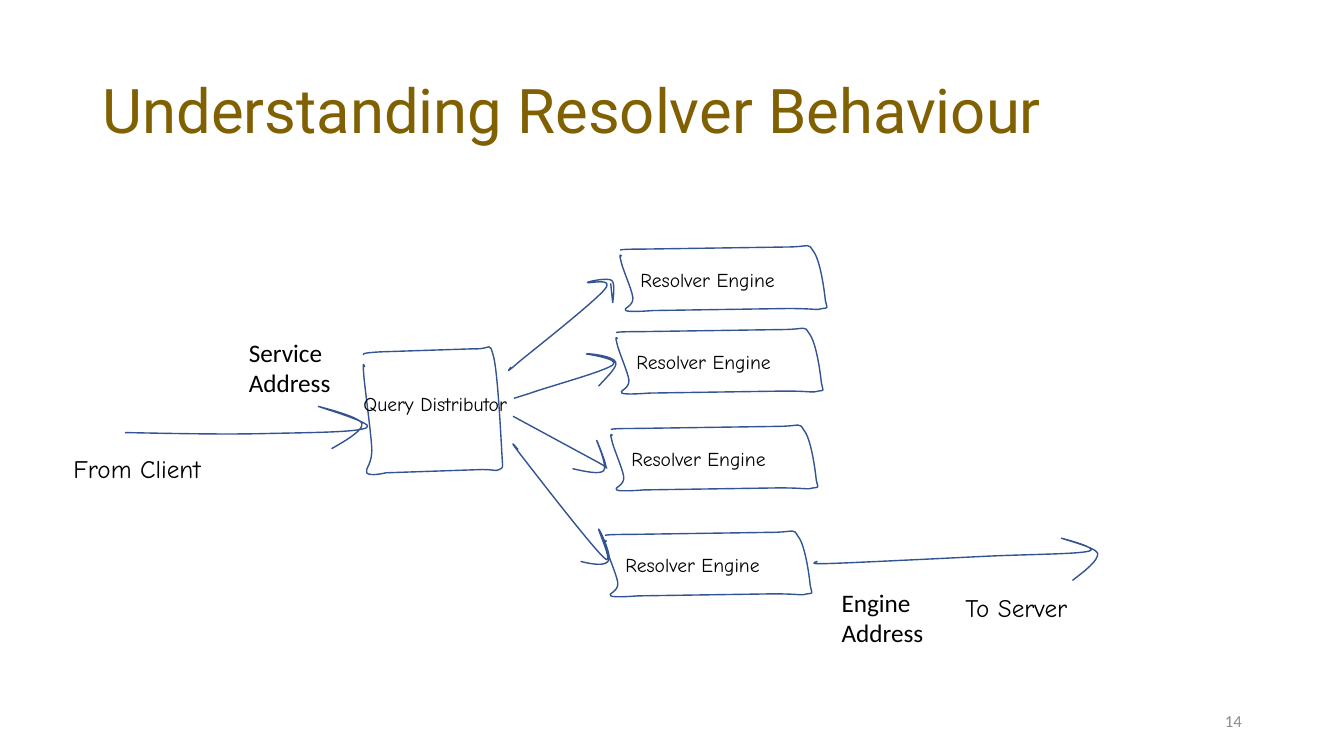
import lxml.etree
import pptx
import pptx.oxml.ns
import pptx.util
from pptx.dml.color import RGBColor
from pptx.enum.text import MSO_ANCHOR, PP_ALIGN

Cm = pptx.util.Cm
qn = pptx.oxml.ns.qn

INK = RGBColor(0x32, 0x54, 0x91)
BLACK = RGBColor(0x00, 0x00, 0x00)
GOLD = RGBColor(0x80, 0x60, 0x00)
GREY = RGBColor(0x8C, 0x8C, 0x8C)
HAND_FONT = "Comic Neue"

# Strokes are drawn on a fine grid, measured from the corner of their box.
# The first pair is the start; then two numbers make a straight line and
# six make a cubic curve.
GRID = Cm(0.0254)

ENGINE_OUTLINE = [
    (2, 10), (1, 9, -1, 7, 1, 14), (2, 21, 12, 43, 13, 51),
    (14, 60, 2, 62, 6, 64), (9, 66, 33, 64, 33, 64), (167, 62),
    (195, 62, 195, 64, 201, 62), (207, 61, 206, 63, 204, 54),
    (203, 44, 199, 14, 192, 5), (186, -4, 191, 1, 163, 1), (26, 3),
    (-1, 3, 0, 4, 1, 4)]
DISTRIBUTOR_OUTLINE = [
    (2, 20), (1, 17, 0, 14, 1, 27), (2, 40, 8, 83, 9, 100),
    (10, 116, 2, 121, 4, 125), (7, 129, 23, 125, 23, 125), (112, 122),
    (131, 121, 131, 124, 135, 122), (140, 119, 139, 123, 138, 104),
    (137, 86, 134, 27, 130, 10), (125, -7, 129, 3, 110, 2), (18, 5),
    (0, 6, 0, 7, 1, 8)]
CLIENT_ARROW = [
    (0, 26), (50, 27, 99, 28, 139, 27), (179, 26, 232, 26, 240, 21),
    (249, 17, 193, 1, 192, 0), (191, 0, 233, 10, 235, 17),
    (237, 23, 221, 33, 205, 42)]
SERVER_ARROW = [
    (4, 23), (-1, 25, -6, 26, 22, 25), (50, 24, 171, 18, 171, 18),
    (213, 16, 261, 16, 273, 13), (286, 10, 245, 0, 246, 0),
    (247, 1, 280, 9, 282, 15), (283, 22, 270, 32, 257, 42)]
FAN_ARROWS = [
    ((12.8, 7.04, 2.67, 2.31), [
        (3, 87), (0, 91, -3, 94, 12, 81), (28, 68, 85, 23, 96, 10),
        (107, -3, 78, 5, 79, 3), (80, 2, 99, -2, 103, 1),
        (107, 4, 104, 22, 104, 23), (104, 23, 103, 14, 102, 4)]),
    ((12.95, 8.92, 2.57, 1.14), [
        (0, 44), (16, 39), (32, 33, 88, 18, 98, 11), (107, 5, 72, 0, 72, 0),
        (73, -1, 99, 2, 101, 8), (103, 13, 93, 22, 84, 32)]),
    ((12.93, 10.49, 2.36, 1.42), [
        (0, 0), (83, 45), (98, 53, 92, 53, 92, 49), (92, 46, 83, 23, 83, 24),
        (83, 25, 94, 49, 90, 54), (86, 58, 72, 55, 59, 52)]),
    ((12.93, 11.2, 2.44, 3.02), [
        (5, 5), (0, -1, -5, -6, 9, 12), (23, 30, 77, 100, 90, 112),
        (102, 124, 84, 84, 85, 84), (86, 84, 98, 110, 95, 115),
        (92, 121, 79, 119, 67, 116)]),
]
ENGINE_CORNERS = [(15.62, 6.2), (15.52, 8.28), (15.39, 10.72), (15.24, 13.39)]


def draw_stroke(page, box, stroke):
    """Draw an open stroke of lines and cubic curves in a box."""
    left, top, width, height = (Cm(length) for length in box)
    builder = page.shapes.build_freeform(0, 0, scale=GRID)
    builder.add_line_segments([(width / GRID, height / GRID)], close=False)
    shape = builder.convert_to_shape(left, top)
    shape.shadow.inherit = False
    shape.fill.background()
    shape.line.color.rgb = INK
    shape.line.width = pptx.util.Pt(1)

    outline = next(shape.element.iter(qn("a:path")))
    for step in list(outline):
        outline.remove(step)
    for index, segment in enumerate(stroke):
        if index == 0:
            tag = "a:moveTo"
        elif len(segment) == 2:
            tag = "a:lnTo"
        else:
            tag = "a:cubicBezTo"
        step = lxml.etree.SubElement(outline, qn(tag))
        for x, y in zip(segment[0::2], segment[1::2]):
            lxml.etree.SubElement(step, qn("a:pt"), x=str(x), y=str(y))


def write_text(page, box, words, size, font=HAND_FONT, color=BLACK,
               align=PP_ALIGN.LEFT, anchor=MSO_ANCHOR.TOP):
    frame = page.shapes.add_textbox(*(Cm(length) for length in box)).text_frame
    frame.word_wrap = True
    frame.vertical_anchor = anchor
    para = frame.paragraphs[0]
    para.alignment = align
    span = para.add_run()
    span.text = words
    span.font.name = font
    span.font.size = pptx.util.Pt(size)
    span.font.color.rgb = color
    return para


def add_heading(page, box):
    para = write_text(page, box, "Understanding Resolver Behaviour", 44,
                      "Roboto", GOLD, anchor=MSO_ANCHOR.MIDDLE)
    para.line_spacing = 0.9


def add_page_number(page, box):
    write_text(page, box, "14", 12, "Calibri", GREY,
               PP_ALIGN.RIGHT, MSO_ANCHOR.MIDDLE)


def add_client_side(page, left, top):
    draw_stroke(page, (left, top, 6.12, 1.04), CLIENT_ARROW)
    write_text(page, (left - 1.55, top + 1.06, 4.67, 1.02), "From Client", 18)
    write_text(page, (left + 2.87, top - 1.86, 3.15, 1.8),
               "Service Address", 18, "Calibri")


def add_distributor(page, left, top):
    draw_stroke(page, (left, top, 3.51, 3.23), DISTRIBUTOR_OUTLINE)
    write_text(page, (left - 0.28, top + 1.01, 4.22, 1.45),
               "Query Distributor", 14, align=PP_ALIGN.CENTER)


def add_engine(page, left, top):
    draw_stroke(page, (left, top, 5.23, 1.65), ENGINE_OUTLINE)
    write_text(page, (left + 0.27, top + 0.42, 4.72, 0.86), "Resolver Engine", 14)


def add_server_side(page, left, top):
    draw_stroke(page, (left, top, 7.14, 1.04), SERVER_ARROW)
    write_text(page, (left + 3.58, top + 1.25, 4.04, 1.02), "To Server", 18)
    write_text(page, (left + 0.46, top + 1.11, 3.15, 1.8),
               "Engine Address", 18, "Calibri")


def main():
    deck = pptx.Presentation()
    deck.slide_width, deck.slide_height = Cm(33.87), Cm(19.05)
    page = deck.slides.add_slide(deck.slide_layouts[6])
    add_heading(page, (2.34, 1.02, 29.21, 3.68))
    add_page_number(page, (23.93, 17.65, 7.62, 1.02))
    add_client_side(page, 3.15, 10.24)
    add_distributor(page, 9.14, 8.74)
    for box, stroke in FAN_ARROWS:
        draw_stroke(page, box, stroke)
    for left, top in ENGINE_CORNERS:
        add_engine(page, left, top)
    add_server_side(page, 20.5, 13.56)
    deck.save("out.pptx")


if __name__ == "__main__":
    main()
